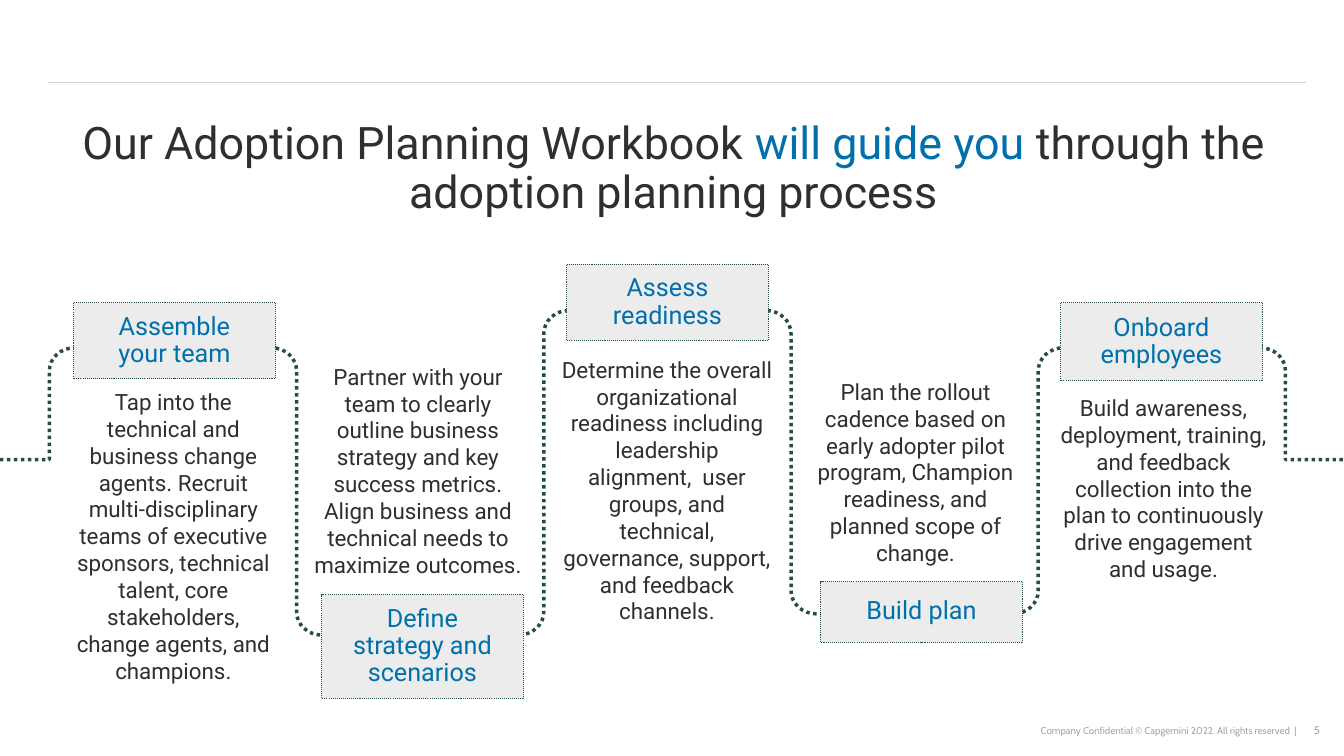
from math import cos, pi, sin
from lxml.etree import SubElement
from pptx import Presentation
from pptx.dml.color import RGBColor as Rgb
from pptx.enum.dml import MSO_LINE as Dash
from pptx.enum.shapes import MSO_CONNECTOR as Link, MSO_SHAPE as Kind
from pptx.enum.text import MSO_ANCHOR as Anchor, MSO_AUTO_SIZE as Fit, PP_ALIGN as Align
from pptx.oxml.ns import qn
from pptx.util import Inches, Pt

HUES = {"ink": "2F2F2F", "blue": "0070AD", "green": "274B47",
        "panel": "ECECEC", "rule": "D4D4D4", "grey": "A6A6A6"}


def hue(name):
    return Rgb.from_string(HUES[name])


def write(shape, runs, size, font, pads, align=Align.CENTER, space=None,
          anchor=Anchor.MIDDLE, fit=Fit.NONE):
    frame = shape.text_frame
    sides = ("margin_left", "margin_top", "margin_right", "margin_bottom")
    form = {"word_wrap": True, "auto_size": fit, "vertical_anchor": anchor}
    form.update(zip(sides, map(Inches, pads)))
    for key, value in form.items():
        setattr(frame, key, value)
    para = frame.paragraphs[0]
    para.alignment = align
    para.line_spacing = space
    for text, tint in runs:
        run = para.add_run()
        run.text = text
        for key, value in {"size": Pt(size), "name": font, "bold": False}.items():
            setattr(run.font, key, value)
        run.font.color.rgb = hue(tint)


deck = Presentation()
deck.slide_width, deck.slide_height = Inches(13.33), Inches(7.5)
slide = deck.slides.add_slide(deck.slide_layouts[5])
shapes = slide.shapes

rule = shapes.add_connector(Link.STRAIGHT, Inches(0.48), Inches(0.82), Inches(12.95), Inches(0.82))
rule.line.color.rgb = hue("rule")
rule.line.width = Pt(0.5)
SubElement(rule._element.spPr, qn("a:effectLst"))

title = shapes.title
for key, value in {"left": 0.34, "top": 1.12, "width": 12.68, "height": 1.12}.items():
    setattr(title, key, Inches(value))
write(title, [("Our Adoption Planning Workbook ", "ink"), ("will guide you ", "blue"),
              ("through the adoption planning process", "ink")],
      32, "Roboto", (0.1, 0.05, 0.1, 0.05), space=0.9)

START, STEP, MID = 0.49, 2.452, 4.56
LEVELS = [3.45, 6.3, 3.08, 6.09, 3.45]
WIDE, TALL, PARTS = 0.25, 0.23, 8
track = [(START, MID)]
for col, level in enumerate(LEVELS):
    side = 1 if col % 2 == 0 else -1
    left = START + STEP * col
    right = left + STEP
    bend = [(WIDE * (1 - cos(n * pi / 2 / PARTS)), level + side * TALL * (1 - sin(n * pi / 2 / PARTS)))
            for n in range(PARTS + 1)]
    track += [(left + x, y) for x, y in bend]
    track += [(right - x, y) for x, y in reversed(bend)]
track += [(START + STEP * len(LEVELS), MID), (13.33, MID)]
pen = shapes.build_freeform(0, Inches(MID))
pen.add_line_segments([(Inches(x), Inches(y)) for x, y in track], close=False)
trail = pen.convert_to_shape()
trail.shadow.inherit = False
trail.fill.background()
trail.line.color.rgb = hue("green")
trail.line.width = Pt(2.5)
trail.line.dash_style = Dash.ROUND_DOT

STAGES = [
    ("Assemble your team", (0.73, 3, 2, 0.76), (0.59, 3.75, 2.26, 2.62),
     "Tap into the technical and business change agents. Recruit multi-disciplinary teams of "
     "executive sponsors, technical talent, core stakeholders, change agents, and champions."),
    ("Define strategy and scenarios", (3.19, 5.9, 2, 1.03), (3, 3.5, 2.29, 2.35),
     "Partner with your team to clearly outline business strategy and key success metrics. "
     "Align business and technical needs to maximize outcomes."),
    ("Assess readiness", (5.62, 2.62, 2, 0.76), (5.47, 3.43, 2.29, 2.62),
     "Determine the overall organizational readiness including leadership alignment,  user "
     "groups, and technical, governance, support, and feedback channels."),
    ("Build plan", (8.14, 5.77, 2, 0.6), (7.89, 3.65, 2.38, 2.08),
     "Plan the rollout cadence based on early adopter pilot program, Champion readiness, "
     "and planned scope of change."),
    ("Onboard employees", (10.52, 3, 2, 0.78), (10.39, 3.81, 2.3, 2.08),
     "Build awareness, deployment, training, and feedback collection into the plan to "
     "continuously drive engagement and usage."),
]
for name, spot, area, text in STAGES:
    card = shapes.add_shape(Kind.RECTANGLE, *map(Inches, spot))
    card.shadow.inherit = False
    card.fill.solid()
    card.fill.fore_color.rgb = hue("panel")
    card.line.color.rgb = hue("green")
    card.line.width = Pt(0.75)
    card.line.dash_style = Dash.ROUND_DOT
    write(card, [(name, "blue")], 18, "Roboto", (0.2, 0, 0.2, 0), space=0.9)
    note = shapes.add_textbox(*map(Inches, area))
    write(note, [(text, "ink")], 16, "Roboto", (0.1,) * 4,
          anchor=Anchor.TOP, fit=Fit.SHAPE_TO_FIT_TEXT)

legal = shapes.add_textbox(*map(Inches, (7.9, 7.13, 4.96, 0.24)))
write(legal, [("Company Confidential © Capgemini 2022. All rights reserved  |", "grey")],
      7, "Cabin", (0,) * 4, align=Align.RIGHT)
page = shapes.add_textbox(*map(Inches, (12.84, 7.13, 0.25, 0.24)))
write(page, [("5", "grey")], 8, "Cabin", (0, 0.05, 0, 0.05), align=Align.RIGHT,
      anchor=Anchor.TOP, fit=Fit.SHAPE_TO_FIT_TEXT)

deck.save("out.pptx")
